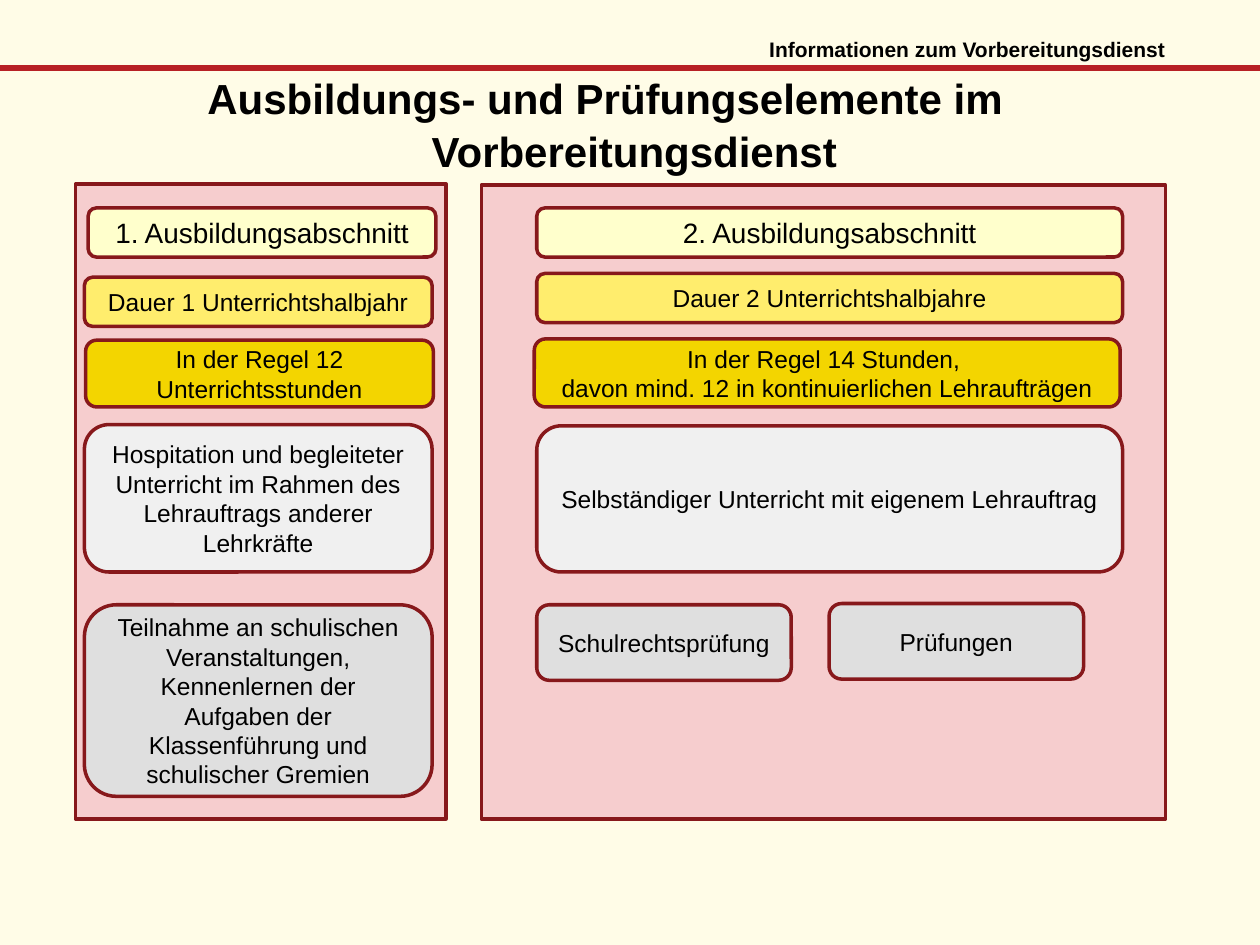
from pptx import Presentation
from pptx.dml.color import RGBColor
from pptx.enum.shapes import MSO_SHAPE
from pptx.enum.text import MSO_ANCHOR, PP_ALIGN
from pptx.util import Inches, Pt

CREAM = RGBColor(0xFF, 0xFC, 0xE7)
RED = RGBColor(0xB7, 0x20, 0x25)
DARK_RED = RGBColor(0x87, 0x18, 0x1B)
PINK = RGBColor(0xF6, 0xCD, 0xCE)
PALE_YELLOW = RGBColor(0xFF, 0xFF, 0xCC)
YELLOW = RGBColor(0xFF, 0xED, 0x6D)
GOLD = RGBColor(0xF3, 0xD5, 0x00)
LIGHT_GRAY = RGBColor(0xF0, 0xF0, 0xF0)
GRAY = RGBColor(0xDF, 0xDF, 0xDF)
BLACK = RGBColor(0x00, 0x00, 0x00)

LEFT_X, LEFT_WIDTH = 0.67, 2.76
RIGHT_X, RIGHT_WIDTH = 4.26, 4.65
EXAM_WIDTH, EXAM_HEIGHT = 2.02, 0.6

# left, top, width, height, fill, size, text
STEPS = [
    (0.7, 1.65, LEFT_WIDTH, 0.39, PALE_YELLOW, 16, "1. Ausbildungsabschnitt"),
    (RIGHT_X, 1.65, RIGHT_WIDTH, 0.39, PALE_YELLOW, 16, "2. Ausbildungsabschnitt"),
    (LEFT_X, 2.2, LEFT_WIDTH, 0.39, YELLOW, 14, "Dauer 1 Unterrichtshalbjahr"),
    (RIGHT_X, 2.17, RIGHT_WIDTH, 0.39, YELLOW, 14, "Dauer 2 Unterrichtshalbjahre"),
    (0.68, 2.7, LEFT_WIDTH, 0.53, GOLD, 14, "In der Regel 12 Unterrichtsstunden"),
    (4.24, 2.69, RIGHT_WIDTH, 0.54, GOLD, 14,
     "In der Regel 14 Stunden, \vdavon mind. 12 in kontinuierlichen Lehraufträgen"),
    (LEFT_X, 3.37, LEFT_WIDTH, 1.17, LIGHT_GRAY, 14,
     "Hospitation und begleiteter Unterricht im Rahmen des "
     "Lehrauftrags anderer Lehrkräfte"),
    (RIGHT_X, 3.38, RIGHT_WIDTH, 1.16, LIGHT_GRAY, 14,
     "Selbständiger Unterricht mit eigenem Lehrauftrag"),
    (LEFT_X, 4.8, LEFT_WIDTH, 1.52, GRAY, 14,
     "Teilnahme an schulischen Veranstaltungen, Kennenlernen der Aufgaben der "
     "Klassenführung und schulischer Gremien"),
    (RIGHT_X, 4.8, EXAM_WIDTH, EXAM_HEIGHT, GRAY, 14, "Schulrechtsprüfung"),
    (6.58, 4.79, EXAM_WIDTH, EXAM_HEIGHT, GRAY, 14, "Prüfungen"),
]


class SlideBuilder:
    """Holds the text style and the slide being built."""

    font_format = {"name": "Arial", "bold": False}

    def __init__(self, slide):
        self.slide = slide
        fill = slide.background.fill
        fill.solid()
        fill.fore_color.rgb = CREAM

    def fill_text(self, frame, paragraphs, align=PP_ALIGN.CENTER, **font_format):
        frame.word_wrap = True
        for index, text in enumerate(paragraphs):
            para = frame.add_paragraph() if index else frame.paragraphs[0]
            para.text = text
            para.alignment = align
            for name, value in {**self.font_format, **font_format}.items():
                setattr(para.font, name, value)
            para.font.color.rgb = BLACK

    def panel(self, position, fill, line=DARK_RED, line_width=2, kind=MSO_SHAPE.RECTANGLE):
        shape = self.slide.shapes.add_shape(kind, *map(Inches, position))
        shape.shadow.inherit = False
        shape.fill.solid()
        shape.fill.fore_color.rgb = fill
        shape.line.color.rgb = line
        shape.line.width = Pt(line_width)
        return shape

    def step(self, position, fill, size, text):
        shape = self.panel(position, fill, kind=MSO_SHAPE.ROUNDED_RECTANGLE)
        shape.text_frame.vertical_anchor = MSO_ANCHOR.MIDDLE
        self.fill_text(shape.text_frame, [text], size=Pt(size))

    def text(self, position, paragraphs, **text_format):
        box = self.slide.shapes.add_textbox(*map(Inches, position))
        self.fill_text(box.text_frame, paragraphs, **text_format)
        return box.text_frame


def main():
    deck = Presentation()
    deck.slide_width, deck.slide_height = Inches(10), Inches(7.5)
    page = SlideBuilder(deck.slides.add_slide(deck.slide_layouts[6]))

    page.panel((0, 0.52, 10, 0.04), RED, line=RED, line_width=0.75)
    title = page.text((0.35, 0.51, 9, 0.47),
                      ["Ausbildungs- und Prüfungselemente im ", "Vorbereitungsdienst"],
                      size=Pt(24), bold=True)
    for para in title.paragraphs:
        para.line_spacing = 1.05
    title.paragraphs[1]._p.get_or_add_pPr().set("marL", str(Inches(0.37)))

    page.panel((3.82, 1.47, 5.43, 5.03), PINK)
    page.panel((0.6, 1.46, 2.94, 5.04), PINK)
    for *position, fill, size, text in STEPS:
        page.step(position, fill, size, text)

    header = page.text((2.64, 0.29, 6.61, 0.2), ["Informationen zum Vorbereitungsdienst"],
                       align=PP_ALIGN.RIGHT, size=Pt(12), bold=True)
    for side in ("left", "top", "right", "bottom"):
        setattr(header, f"margin_{side}", 0)

    deck.save("out.pptx")


if __name__ == "__main__":
    main()
